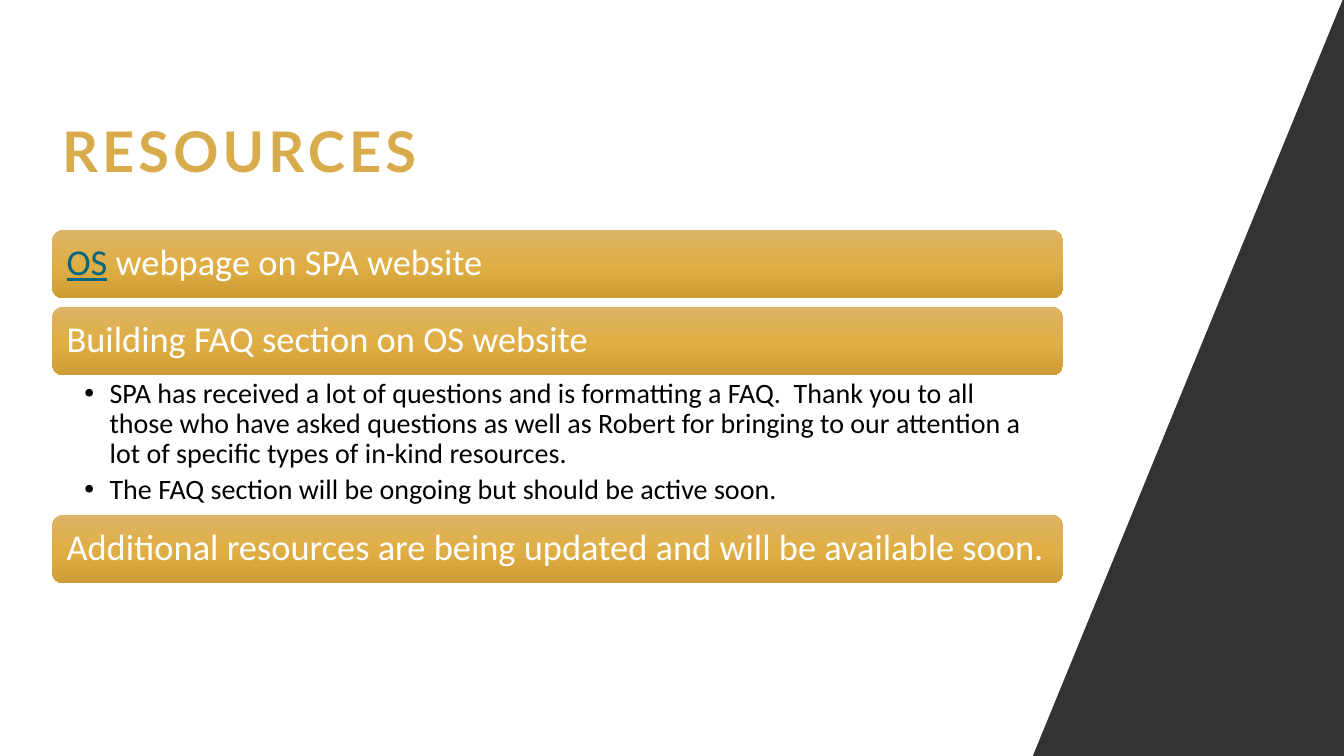
from dataclasses import dataclass

from lxml.etree import SubElement
from pptx import Presentation
from pptx.dml.color import RGBColor
from pptx.enum.shapes import MSO_SHAPE
from pptx.enum.text import MSO_ANCHOR, PP_ALIGN
from pptx.oxml import parse_xml
from pptx.oxml.ns import nsdecls, qn
from pptx.slide import Slide
from pptx.text.text import TextFrame
from pptx.util import Emu, Inches, Pt

SLIDE_WIDTH, SLIDE_HEIGHT = Inches(13.33), Inches(7.5)

# Shares of the slide, in percent
LEFT, WIDTH = 3.88, 75.23
TITLE_TOP, TITLE_HEIGHT = 5.73, 19.33
STACK_TOP, BAR_HEIGHT, BAR_GAP, LIST_HEIGHT = 30.4, 9.07, 1.1, 18.45
WEDGE_FOOT, WEDGE_TIP = 76.85, 99.9

GOLD, WHITE, BLACK, LINK = "D8AB4C", "FFFFFF", "000000", "006682"
BAR_GRADIENT = ((0, "DDB467"), (50, "DFAE45"), (100, "CE9D35"))

TITLE_FONT = {"name": "Lato", "size": Pt(40), "bold": True}
BAR_FONT = {"name": "Calibri", "size": Pt(26)}
LIST_FONT = {"name": "Calibri", "size": Pt(20)}


@dataclass(frozen=True)
class Span:
    text: str
    color: str = WHITE
    underline: bool = False


@dataclass(frozen=True)
class Section:
    heading: tuple[Span, ...]
    bullets: tuple[str, ...] = ()


SECTIONS = (
    Section((Span("OS", LINK, True), Span(" webpage on SPA website"))),
    Section(
        (Span("Building FAQ section on OS website"),),
        (
            "SPA has received a lot of questions and is formatting a FAQ.  "
            "Thank you to all those who have asked questions as well as Robert "
            "for bringing to our attention a lot of specific types of in-kind resources.",
            "The FAQ section will be ongoing but should be active soon.",
        ),
    ),
    Section((Span("Additional resources are being updated and will be available soon."),)),
)


def across(percent: float) -> Emu:
    return Emu(round(SLIDE_WIDTH * percent / 100))


def down(percent: float) -> Emu:
    return Emu(round(SLIDE_HEIGHT * percent / 100))


def color(value: str) -> RGBColor:
    return RGBColor.from_string(value)


def apply(target, values: dict) -> None:
    for name, value in values.items():
        setattr(target, name, value)


def add_span(para, span: Span, font: dict):
    run = para.add_run()
    run.text = span.text
    apply(run.font, font | {"underline": span.underline})
    run.font.color.rgb = color(span.color)
    return run


def set_frame(frame: TextFrame, anchor: MSO_ANCHOR, **margins: float) -> None:
    apply(frame, {"word_wrap": True, "vertical_anchor": anchor})
    apply(frame, {f"margin_{side}": Inches(size) for side, size in margins.items()})


def add_wedge(slide: Slide) -> None:
    """Draw the dark slanted panel along the right edge."""
    builder = slide.shapes.build_freeform(across(WEDGE_TIP), 0, 1.0)
    corners = ((100, 0), (100, 100), (WEDGE_FOOT, 100))
    builder.add_line_segments([(across(x), down(y)) for x, y in corners])
    wedge = builder.convert_to_shape()
    wedge.shadow.inherit = False
    wedge.line.fill.background()
    wedge.fill.solid()
    wedge.fill.fore_color.rgb = color(BLACK)
    tint = wedge.fill._xPr.find(".//" + qn("a:srgbClr"))
    SubElement(tint, qn("a:alpha"), val="80000")


def add_title(slide: Slide, text: str) -> None:
    box = slide.shapes.add_textbox(
        across(LEFT), down(TITLE_TOP), across(WIDTH), down(TITLE_HEIGHT))
    set_frame(box.text_frame, MSO_ANCHOR.BOTTOM)
    para = box.text_frame.paragraphs[0]
    para.line_spacing = 0.9
    run = add_span(para, Span(text, GOLD), TITLE_FONT)
    run.font._element.set("spc", "300")


def add_bar(slide: Slide, top: float, heading: tuple[Span, ...]) -> None:
    """Draw a bar; its rounded corners add a little to the text margins."""
    bar = slide.shapes.add_shape(
        MSO_SHAPE.ROUNDED_RECTANGLE,
        across(LEFT), down(top), across(WIDTH), down(BAR_HEIGHT))
    bar.shadow.inherit = False
    bar.line.fill.background()
    stops = "".join(
        f'<a:gs pos="{position * 1000}"><a:srgbClr val="{value}"/></a:gs>'
        for position, value in BAR_GRADIENT)
    gradient = parse_xml(
        f'<a:gradFill {nsdecls("a")} rotWithShape="1"><a:gsLst>{stops}</a:gsLst>'
        '<a:lin ang="5400000" scaled="0"/></a:gradFill>')
    bar._element.spPr.find(qn("a:prstGeom")).addnext(gradient)
    set_frame(bar.text_frame, MSO_ANCHOR.MIDDLE, left=0.11, right=0.05, top=0.05, bottom=0.05)
    para = bar.text_frame.paragraphs[0]
    apply(para, {"alignment": PP_ALIGN.LEFT, "line_spacing": 0.9})
    for span in heading:
        add_span(para, span, BAR_FONT)


def add_bullets(slide: Slide, top: float, bullets: tuple[str, ...]) -> None:
    box = slide.shapes.add_textbox(
        across(LEFT), down(top), across(WIDTH), down(LIST_HEIGHT))
    frame = box.text_frame
    set_frame(frame, MSO_ANCHOR.TOP, left=0.32, right=0.2, top=0.04, bottom=0.04)
    for index, text in enumerate(bullets):
        para = frame.add_paragraph() if index else frame.paragraphs[0]
        properties = para._p.get_or_add_pPr()
        properties.set("marL", str(Inches(0.25)))
        properties.set("indent", str(-Inches(0.25)))
        SubElement(properties, qn("a:buFont"), typeface="Arial")
        SubElement(properties, qn("a:buChar"), char="•")
        apply(para, {"level": 1, "line_spacing": 0.9, "space_after": Pt(4)})
        add_span(para, Span(text, BLACK), LIST_FONT)


def add_sections(slide: Slide) -> None:
    """Stack the bars; a list takes the place of the gap below its bar."""
    top = STACK_TOP
    for section in SECTIONS:
        add_bar(slide, top, section.heading)
        top += BAR_HEIGHT
        if section.bullets:
            add_bullets(slide, top, section.bullets)
            top += LIST_HEIGHT
        else:
            top += BAR_GAP


def main() -> None:
    deck = Presentation()
    apply(deck, {"slide_width": SLIDE_WIDTH, "slide_height": SLIDE_HEIGHT})
    page = deck.slides.add_slide(deck.slide_layouts[6])
    add_wedge(page)
    add_title(page, "RESOURCES")
    add_sections(page)
    deck.save("out.pptx")


if __name__ == "__main__":
    main()
